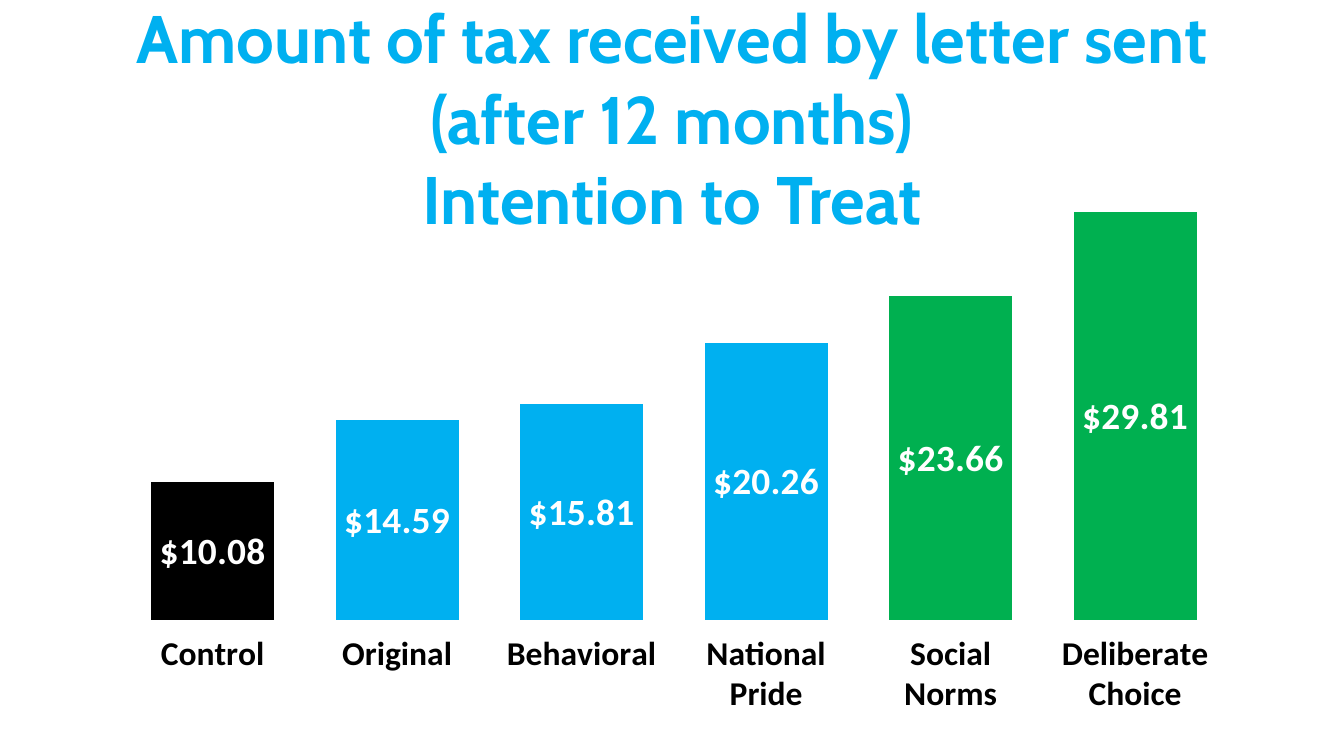
from dataclasses import dataclass

from lxml.etree import SubElement
from pptx import Presentation
from pptx.chart.data import CategoryChartData
from pptx.dml.color import RGBColor
from pptx.enum.chart import XL_CHART_TYPE, XL_LABEL_POSITION, XL_TICK_MARK
from pptx.enum.text import MSO_ANCHOR, PP_ALIGN
from pptx.oxml.ns import qn
from pptx.util import Cm, Pt


@dataclass(frozen=True)
class Theme:
    black: RGBColor = RGBColor(0, 0, 0)
    white: RGBColor = RGBColor(255, 255, 255)
    blue: RGBColor = RGBColor(0, 176, 240)
    green: RGBColor = RGBColor(0, 176, 80)
    head: Pt = Pt(36)
    value: Pt = Pt(20)
    axis: Pt = Pt(18)
    base: Pt = Pt(10)


theme = Theme()
money = "[$$-409]#,##0.00"
bars = [
    ("Control", 10.08, theme.black),
    ("Original", 14.59, theme.blue),
    ("Behavioral", 15.81, theme.blue),
    ("National Pride", 20.26, theme.blue),
    ("Social Norms", 23.66, theme.green),
    ("Deliberate Choice", 29.81, theme.green),
]


def apply(item, **values):
    for key, value in values.items():
        setattr(item, key, value)


def style(font, size, color, name="Calibri", bold=True):
    apply(font, size=size, name=name, bold=bold)
    font.color.rgb = color


deck = Presentation()
apply(deck, slide_width=Cm(25.4), slide_height=Cm(14.29))
slide = deck.slides.add_slide(deck.slide_layouts[6])

# Chart
data = CategoryChartData(number_format=money)
data.categories = [name for name, _, _ in bars]
data.add_series("Series 1", [value for _, value, _ in bars])
chart = slide.shapes.add_chart(
    XL_CHART_TYPE.COLUMN_CLUSTERED, Cm(1.73), Cm(2.67), Cm(21.84), Cm(10.82), data
).chart
apply(chart, has_legend=False, has_title=False)
style(chart.font, theme.base, theme.black, bold=False)

# Axes
apply(chart.value_axis, visible=False, has_major_gridlines=False,
      minimum_scale=0, maximum_scale=35)
axis = chart.category_axis
apply(axis, major_tick_mark=XL_TICK_MARK.OUTSIDE, has_major_gridlines=False)
axis.format.line.fill.background()
style(axis.tick_labels.font, theme.axis, theme.black)

# Bars and their values
plot = chart.plots[0]
apply(plot, gap_width=50, vary_by_categories=False, has_data_labels=True)
labels = plot.data_labels
apply(labels, show_value=True, position=XL_LABEL_POSITION.CENTER,
      number_format=money, number_format_is_linked=False)
style(labels.font, theme.value, theme.white)
row = plot.series[0]
row.format.fill.solid()
row.format.fill.fore_color.rgb = theme.blue
for index, (_, _, color) in enumerate(bars):
    fill = row.points[index].format.fill
    fill.solid()
    fill.fore_color.rgb = color

# Fixed place of the plot inside the chart frame
area = chart.element.find(".//" + qn("c:plotArea"))
layout = area.find(qn("c:layout"))
if layout is None:
    layout = SubElement(area, qn("c:layout"))
    area.insert(0, layout)
manual = SubElement(layout, qn("c:manualLayout"))
frame = {"layoutTarget": "inner", "xMode": "edge", "yMode": "edge",
         "x": 0.025, "y": 0, "w": 0.958, "h": 0.845}
for tag, value in frame.items():
    SubElement(manual, qn("c:" + tag)).set("val", str(value))

# Title
box = slide.shapes.add_textbox(Cm(1.27), Cm(1.02), Cm(22.86), Cm(2.39))
apply(box.text_frame, word_wrap=True, vertical_anchor=MSO_ANCHOR.MIDDLE)
title = box.text_frame.paragraphs[0]
title.alignment = PP_ALIGN.CENTER
title.add_run().text = "Amount of tax received by letter sent (after 12 months)"
title.add_line_break()
title.add_run().text = "Intention to Treat"
for run in title.runs:
    style(run.font, theme.head, theme.blue, "Cabin")

deck.save("out.pptx")
